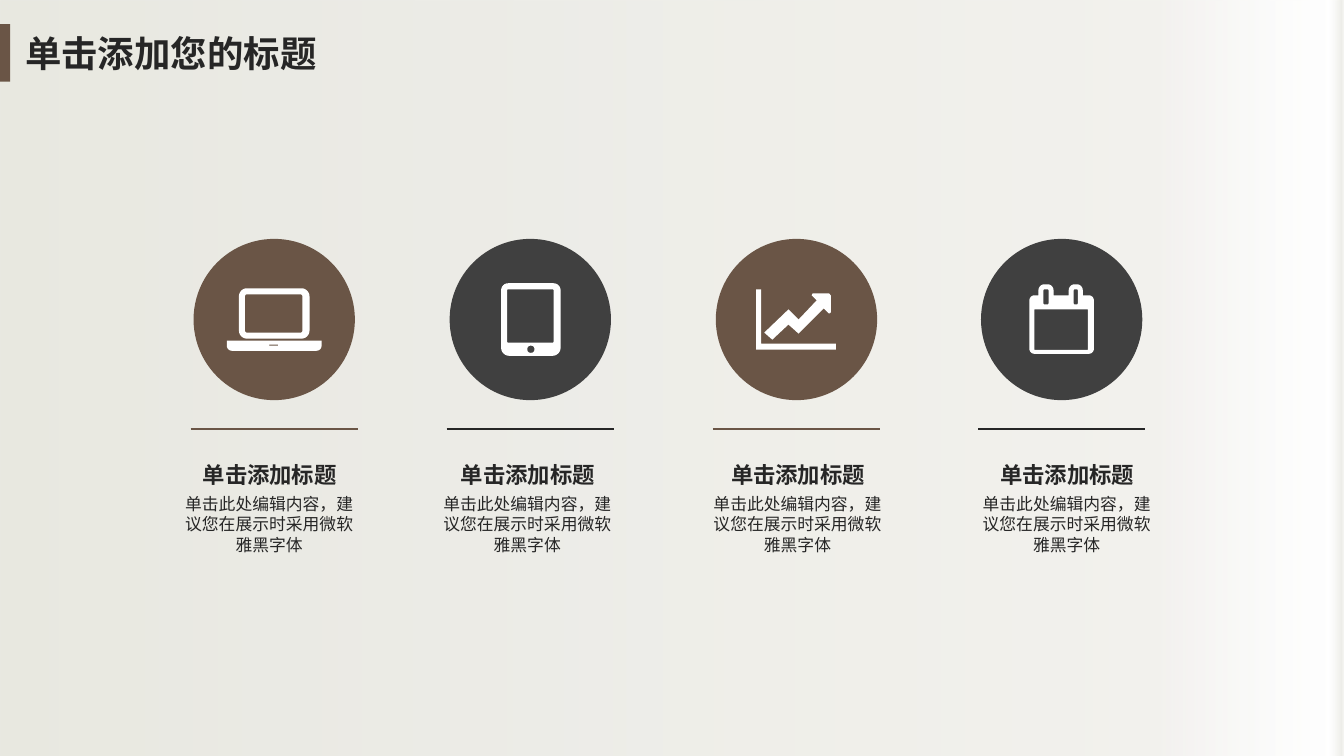
from dataclasses import dataclass
from math import cos, pi, sin

from lxml.etree import SubElement
from pptx import Presentation
from pptx.dml.color import RGBColor
from pptx.enum.shapes import MSO_CONNECTOR, MSO_SHAPE
from pptx.enum.text import MSO_AUTO_SIZE, PP_ALIGN
from pptx.oxml.ns import qn
from pptx.util import Inches, Pt

BROWN = RGBColor(0x6A, 0x55, 0x46)
CHARCOAL = RGBColor(0x40, 0x40, 0x40)
INK = RGBColor(0x26, 0x26, 0x26)
WHITE = RGBColor(0xFF, 0xFF, 0xFF)
CJK_FONT = "Noto Sans CJK SC"

# Position in percent, colour, opacity in percent
BACKDROP_STOPS = [
    (0, RGBColor(0xE7, 0xE7, 0xDF), 94),
    (86, RGBColor(0xF0, 0xEF, 0xEB), 85),
    (99, WHITE, 62),
    (100, RGBColor(0xEB, 0xEB, 0xE5), 100),
]

Outline = list[tuple[float, float]]


@dataclass
class Feature:
    circle_left: float
    text_left: float
    circle_color: RGBColor
    rule_color: RGBColor
    icon: list[Outline]
    body_font: str = CJK_FONT


def rounded(left: float, top: float, right: float, bottom: float,
            top_radius: float = 0, bottom_radius: float = 0) -> Outline:
    """Trace a rounded box clockwise, from bottom left to bottom right."""
    steps = 6
    corners = [
        (left + bottom_radius, bottom - bottom_radius, bottom_radius, pi / 2),
        (left + top_radius, top + top_radius, top_radius, pi),
        (right - top_radius, top + top_radius, top_radius, 3 * pi / 2),
        (right - bottom_radius, bottom - bottom_radius, bottom_radius, 0),
    ]
    return [(x + radius * cos(start + step * pi / 2 / steps),
             y + radius * sin(start + step * pi / 2 / steps))
            for x, y, radius, start in corners for step in range(steps + 1)]


def laptop() -> list[Outline]:
    return [
        rounded(2.25, 3.38, 3.19, 3.48, 0, 0.05),
        rounded(2.37, 2.86, 3.07, 3.36, 0.08, 0.08),
        rounded(2.43, 2.92, 3, 3.3, 0.02, 0.02),
        rounded(2.67, 3.42, 2.76, 3.43),
    ]


def tablet() -> list[Outline]:
    return [
        rounded(4.97, 2.81, 5.56, 3.53, 0.07, 0.08),
        rounded(5.03, 2.87, 5.49, 3.4, 0.01, 0.01),
        rounded(5.23, 3.43, 5.3, 3.5, 0.03, 0.03),
    ]


def growth_chart() -> list[Outline]:
    axes = [(7.5, 2.87), (7.55, 2.87), (7.55, 3.41),
            (8.29, 3.41), (8.29, 3.47), (7.5, 3.47)]
    arrow = [(8.24, 3.1), (8.23, 3.11), (8.22, 3.11), (8.17, 3.06),
             (7.92, 3.31), (7.82, 3.22), (7.66, 3.37), (7.58, 3.3),
             (7.82, 3.07), (7.92, 3.17), (8.1, 2.98), (8.05, 2.93),
             (8.06, 2.91), (8.22, 2.91), (8.24, 2.93)]
    return [axes, arrow]


def calendar() -> list[Outline]:
    sheet = rounded(10.21, 2.93, 10.85, 3.51, 0.05, 0.05)
    half = len(sheet) // 2
    rings = [(10.3, 10.45), (10.6, 10.74)]
    tabs = [point for left, right in rings
            for point in rounded(left, 2.82, right, 2.93, 0.06)]
    slots = [rounded(left + 0.05, 2.87, right - 0.05, 3.02, 0.01, 0.01)
             for left, right in rings]
    return [sheet[:half] + tabs + sheet[half:],
            rounded(10.26, 3.07, 10.79, 3.47), *slots]


FEATURES = [
    Feature(1.92, 1.82, BROWN, BROWN, laptop(), "Arial"),
    Feature(4.46, 4.38, CHARCOAL, INK, tablet()),
    Feature(7.1, 7.06, BROWN, BROWN, growth_chart()),
    Feature(9.73, 9.73, CHARCOAL, INK, calendar()),
]


def paint(shape, color: RGBColor) -> None:
    shape.shadow.inherit = False
    shape.fill.solid()
    shape.fill.fore_color.rgb = color
    shape.line.fill.background()


def add_filled(page, kind: MSO_SHAPE, left: float, top: float,
               width: float, height: float, color: RGBColor):
    shape = page.shapes.add_shape(
        kind, Inches(left), Inches(top), Inches(width), Inches(height))
    paint(shape, color)
    return shape


def add_backdrop(page) -> None:
    shape = add_filled(page, MSO_SHAPE.RECTANGLE, 0, 0, 13.33, 7.5, WHITE)
    shape.fill.gradient()
    shape.fill.gradient_angle = 0
    stops = shape._element.spPr.find(qn("a:gradFill")).find(qn("a:gsLst"))
    for stop in list(stops):
        stops.remove(stop)
    for position, color, opacity in BACKDROP_STOPS:
        stop = SubElement(stops, qn("a:gs"), pos=str(position * 1000))
        tint = SubElement(stop, qn("a:srgbClr"), val=str(color))
        SubElement(tint, qn("a:alpha"), val=str(opacity * 1000))


def add_rule(page, left: float, top: float, width: float,
             color: RGBColor) -> None:
    rule = page.shapes.add_connector(
        MSO_CONNECTOR.STRAIGHT, Inches(left), Inches(top),
        Inches(left + width), Inches(top))
    rule.line.color.rgb = color
    rule.line.width = Pt(1.5)
    SubElement(rule._element.spPr, qn("a:effectLst"))


def add_icon(page, outlines: list[Outline]) -> None:
    """Draw all outlines as one shape, so that inner ones become holes."""
    contours = [[(Inches(x), Inches(y)) for x, y in outline]
                for outline in outlines]
    first, *others = contours
    builder = page.shapes.build_freeform(*first[0])
    builder.add_line_segments(first[1:])
    for contour in others:
        builder.move_to(*contour[0])
        builder.add_line_segments(contour[1:])
    paint(builder.convert_to_shape(), WHITE)


def add_text(page, text: str, left: float, top: float, width: float,
             height: float, font: dict, align: PP_ALIGN = PP_ALIGN.CENTER,
             wrap: bool = True, inset: bool = False) -> None:
    box = page.shapes.add_textbox(
        Inches(left), Inches(top), Inches(width), Inches(height))
    frame = box.text_frame
    layout = {"word_wrap": wrap, "auto_size": MSO_AUTO_SIZE.SHAPE_TO_FIT_TEXT}
    if not inset:
        sides = ("left", "top", "right", "bottom")
        layout |= {f"margin_{side}": 0 for side in sides}
    for name, value in layout.items():
        setattr(frame, name, value)
    para = frame.paragraphs[0]
    para.alignment = align
    span = para.add_run()
    span.text = text
    for name, value in font.items():
        setattr(span.font, name, value)
    span.font.color.rgb = INK
    SubElement(span._r.rPr, qn("a:ea"), typeface=font["name"])


def add_feature(page, feature: Feature) -> None:
    add_rule(page, feature.circle_left - 0.03, 4.26, 1.66, feature.rule_color)
    add_filled(page, MSO_SHAPE.OVAL, feature.circle_left, 2.37, 1.6, 1.6,
               feature.circle_color)
    add_icon(page, feature.icon)
    add_text(page, "单击添加标题", feature.text_left + 0.18, 4.58, 1.35, 0.27,
             {"name": CJK_FONT, "size": Pt(16), "bold": True}, wrap=False)
    add_text(page, "单击此处编辑内容，建议您在展示时采用微软雅黑字体",
             feature.text_left, 4.9, 1.7, 0.61,
             {"name": feature.body_font, "size": Pt(12)})


deck = Presentation()
deck.slide_width, deck.slide_height = Inches(13.33), Inches(7.5)
page = deck.slides.add_slide(deck.slide_layouts[6])
add_backdrop(page)
add_filled(page, MSO_SHAPE.RECTANGLE, 0, 0.24, 0.1, 0.57, BROWN)
for feature in FEATURES:
    add_feature(page, feature)
add_text(page, "单击添加您的标题", 0.15, 0.26, 3.91, 0.54,
         {"name": CJK_FONT, "size": Pt(26), "bold": True},
         align=PP_ALIGN.LEFT, inset=True)
deck.save("out.pptx")
